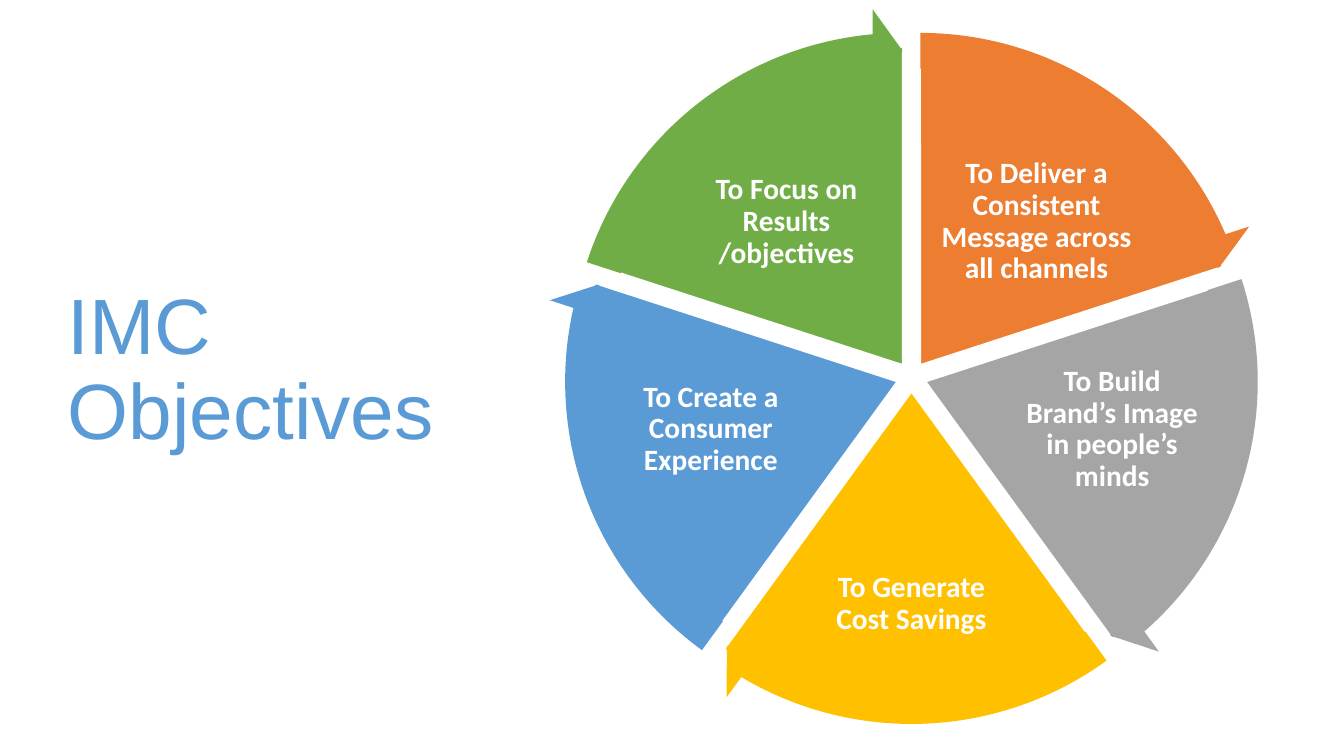
from math import cos, radians, sin

from pptx import Presentation
from pptx.dml.color import RGBColor
from pptx.enum.shapes import MSO_SHAPE
from pptx.enum.text import MSO_ANCHOR, MSO_AUTO_SIZE, PP_ALIGN
from pptx.util import Inches, Pt

# Content
HEADING = "IMC Objectives"
COLORS = {"orange": "ED7D31", "gray": "A5A5A5", "gold": "FFC000",
          "blue": "5B9BD5", "green": "70AD47", "white": "FFFFFF"}
UPPER_BOX, MIDDLE_BOX, LOWER_BOX = (2.02, 1.35), (1.88, 1.5), (1.8, 1.65)
# Objective, slice color, label center relative to the wheel center, label size
OBJECTIVES = [
    ("To Deliver a Consistent Message across all channels", "orange", (1.24, -1.54), UPPER_BOX),
    ("To Build Brand’s Image in people’s minds", "gray", (1.99, 0.52), MIDDLE_BOX),
    ("To Generate Cost Savings", "gold", (0, 2.25), LOWER_BOX),
    ("To Create a Consumer Experience", "blue", (-1.99, 0.52), MIDDLE_BOX),
    ("To Focus on Results /objectives", "green", (-1.24, -1.54), UPPER_BOX),
]

# Wheel geometry, in inches and degrees
WIDTH, HEIGHT = 13.33, 7.5
CENTER_X, CENTER_Y = 9.04, 3.74
PIE_SIZE, ARROW_SIZE = 6.3, 7.08
SLICE_GAP = 0.15
SWEEP = 360 / len(OBJECTIVES)
TOP_ANGLE = 270
ARROWHEAD_ANGLE = 5.46
ANGLE_UNIT = 0.6  # adjustment value per degree


def rgb(name):
    return RGBColor.from_string(COLORS[name])


def centered(x, y, width, height):
    return [Inches(v) for v in (x - width / 2, y - height / 2, width, height)]


def write(frame, text, *, font, size, color, bold=False, align=PP_ALIGN.CENTER, inset=0.03):
    frame.word_wrap = True
    frame.auto_size = MSO_AUTO_SIZE.NONE
    frame.vertical_anchor = MSO_ANCHOR.MIDDLE
    frame.margin_left = frame.margin_right = Inches(inset)
    frame.margin_top = frame.margin_bottom = Inches(0.03)
    paragraph = frame.paragraphs[0]
    paragraph.alignment = align
    paragraph.line_spacing = 0.9
    run = paragraph.add_run()
    run.text = text
    run.font.name, run.font.size, run.font.bold = font, Pt(size), bold
    run.font.color.rgb = rgb(color)


def add_sector(slide, preset, x, y, size, color, adjustments):
    sector = slide.shapes.add_shape(preset, *centered(x, y, size, size))
    for index, value in enumerate(adjustments):
        sector.adjustments[index] = value
    sector.shadow.inherit = False
    sector.fill.solid()
    sector.fill.fore_color.rgb = rgb(color)
    return sector


def main():
    deck = Presentation()
    deck.slide_width, deck.slide_height = Inches(WIDTH), Inches(HEIGHT)
    slide = deck.slides.add_slide(deck.slide_layouts[5])

    # Heading
    title = slide.shapes.title
    title.left, title.top = Inches(0.57), Inches(0.68)
    title.width, title.height = Inches(4.16), Inches(6.02)
    write(title.text_frame, HEADING, font="Arial", size=56, color="blue",
          align=PP_ALIGN.LEFT, inset=0.1)

    # Slices, each pushed outward from the center, with their labels
    arrows = []
    for index, (objective, color, (dx, dy), box) in enumerate(OBJECTIVES):
        start = (TOP_ANGLE + index * SWEEP) % 360
        end = (start + SWEEP) % 360
        middle = radians(start + SWEEP / 2)
        x = CENTER_X + SLICE_GAP * cos(middle)
        y = CENTER_Y + SLICE_GAP * sin(middle)
        piece = add_sector(slide, MSO_SHAPE.PIE, x, y, PIE_SIZE, color,
                           (start * ANGLE_UNIT, end * ANGLE_UNIT))
        piece.line.color.rgb = rgb("white")
        piece.line.width = Pt(1)
        label = slide.shapes.add_textbox(*centered(CENTER_X + dx, CENTER_Y + dy, *box))
        write(label.text_frame, objective, font="Calibri", size=21, color="white", bold=True)
        arrows.append((x, y, color, start, end))

    # Arrows around the rim, in front of all slices
    for x, y, color, start, end in arrows:
        angles = [a * ANGLE_UNIT for a in (ARROWHEAD_ANGLE, end - ARROWHEAD_ANGLE, start)]
        arrow = add_sector(slide, MSO_SHAPE.CIRCULAR_ARROW, x, y, ARROW_SIZE, color,
                           (0.05, *angles, 0.06))
        arrow.line.fill.background()

    deck.save("out.pptx")


if __name__ == "__main__":
    main()
